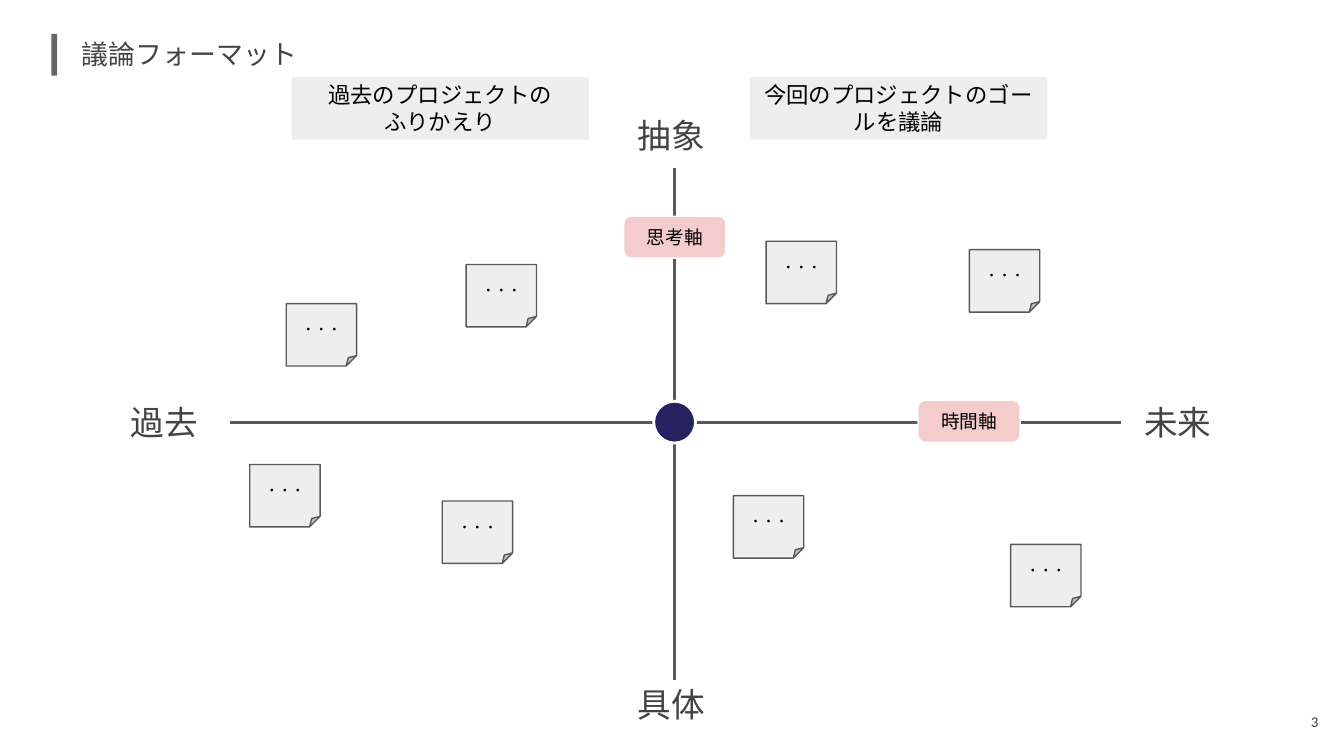
from lxml import etree
from pptx import Presentation
from pptx.dml.color import RGBColor
from pptx.enum.shapes import MSO_CONNECTOR, MSO_SHAPE as Preset
from pptx.enum.text import MSO_ANCHOR as Anchor, MSO_AUTO_SIZE as AutoSize, PP_ALIGN as Align
from pptx.oxml.ns import qn
from pptx.util import Cm, Pt

FONT = "Calibri"
COLORS = {
    "text": "434343", "black": "000000", "white": "FFFFFF", "bar": "666666",
    "line": "595959", "paper": "EEEEEE", "tag": "F4CCCC", "origin": "262260",
}
WIDE_INSET, THIN_INSET = 0.25, 0.05
CENTER_X, CENTER_Y = 12.75, 7.98
LEFT_END, RIGHT_END, TOP_END, BOTTOM_END = 4.34, 21.18, 3.18, 12.85

LABEL_HEIGHT = 0.86
AXIS_LABELS = [  # text, left, top, width
    ("抽象", 10.11, 2.13, 5.16),
    ("具体", 10.11, 12.88, 5.16),
    ("過去", 2.03, 7.54, 2.16),
    ("未来", 21.18, 7.54, 2.16),
]
ORIGIN_SIZE = 0.79
TAG_SIZE = (1.93, 0.79)
AXIS_TAGS = [("思考軸", 11.79, 4.09), ("時間軸", 17.35, 7.57)]
NOTE_SIZE = (1.33, 1.18)
NOTES = [
    (4.72, 8.78), (8.36, 9.47), (5.41, 5.74), (14.48, 4.56),
    (18.32, 4.72), (8.81, 5.0), (13.86, 9.37), (19.1, 10.29),
]
HEADER_SIZE = (5.62, 1.18)
HEADER_TOP = 1.46
HEADERS = [
    (["過去のプロジェクトの", "ふりかえり"], 5.51),
    (["今回のプロジェクトのゴールを議論"], 14.17),
]


def rgb(name):
    return RGBColor.from_string(COLORS[name])


def write(shape, lines, size, color="black", align=Align.CENTER,
          anchor=Anchor.MIDDLE, inset=WIDE_INSET):
    frame = shape.text_frame
    frame.word_wrap = True
    frame.vertical_anchor = anchor
    frame.margin_left = frame.margin_right = Cm(inset)
    frame.margin_top = frame.margin_bottom = Cm(inset)
    for index, line in enumerate(lines):
        para = frame.add_paragraph() if index else frame.paragraphs[0]
        para.alignment = align
        span = para.add_run()
        span.text = line
        span.font.name = FONT
        span.font.size = Pt(size)
        span.font.color.rgb = rgb(color)


def add_text(page, line, left, top, width, height, size, **style):
    box = page.shapes.add_textbox(Cm(left), Cm(top), Cm(width), Cm(height))
    write(box, [line], size, color="text", **style)
    return box


def add_shape(page, preset, left, top, width, height, fill, line=None, weight=0.75):
    shape = page.shapes.add_shape(preset, Cm(left), Cm(top), Cm(width), Cm(height))
    shape.shadow.inherit = False
    shape.fill.solid()
    shape.fill.fore_color.rgb = rgb(fill)
    if line:
        shape.line.color.rgb = rgb(line)
        shape.line.width = Pt(weight)
    else:
        shape.line.fill.background()
    return shape


def add_axis_arm(page, end_x, end_y):
    """Draw one line from the origin to the end of an axis."""
    arm = page.shapes.add_connector(
        MSO_CONNECTOR.STRAIGHT, Cm(CENTER_X), Cm(CENTER_Y), Cm(end_x), Cm(end_y))
    arm.line.color.rgb = rgb("line")
    arm.line.width = Pt(1.5)
    etree.SubElement(arm._element.spPr, qn("a:effectLst"))


def add_title(page):
    add_shape(page, Preset.RECTANGLE, 0.97, 0.64, 0.11, 0.79, "bar")
    add_text(page, "議論フォーマット", 1.3, 0.43, 23.62, 1.17, 14.4, align=Align.LEFT)
    add_text(page, "3", 23.75, 13.21, 1.42, 0.86, 8, align=Align.RIGHT)


def add_axes(page):
    for end_x, end_y in [(RIGHT_END, CENTER_Y), (CENTER_X, TOP_END),
                         (LEFT_END, CENTER_Y), (CENTER_X, BOTTOM_END)]:
        add_axis_arm(page, end_x, end_y)
    for name, left, top, width in AXIS_LABELS:
        label = add_text(page, name, left, top, width, LABEL_HEIGHT, 18,
                         anchor=Anchor.TOP, inset=THIN_INSET)
        label.text_frame.auto_size = AutoSize.SHAPE_TO_FIT_TEXT
    add_shape(page, Preset.OVAL, CENTER_X - ORIGIN_SIZE / 2, CENTER_Y - ORIGIN_SIZE / 2,
              ORIGIN_SIZE, ORIGIN_SIZE, "origin", "white", 1.5)
    for name, left, top in AXIS_TAGS:
        tag = add_shape(page, Preset.ROUNDED_RECTANGLE, left, top, *TAG_SIZE, "tag", "white")
        write(tag, [name], 10)


def add_notes(page):
    for left, top in NOTES:
        note = add_shape(page, Preset.FOLDED_CORNER, left, top, *NOTE_SIZE, "paper", "line")
        write(note, ["・・・"], 7, inset=THIN_INSET)


def add_headers(page):
    for lines, left in HEADERS:
        header = add_shape(page, Preset.RECTANGLE, left, HEADER_TOP, *HEADER_SIZE, "paper")
        write(header, lines, 12)


def main():
    deck = Presentation()
    deck.slide_width, deck.slide_height = Cm(25.4), Cm(14.29)
    page = deck.slides.add_slide(deck.slide_layouts[6])
    add_title(page)
    add_axes(page)
    add_notes(page)
    add_headers(page)
    deck.save("out.pptx")


if __name__ == "__main__":
    main()
